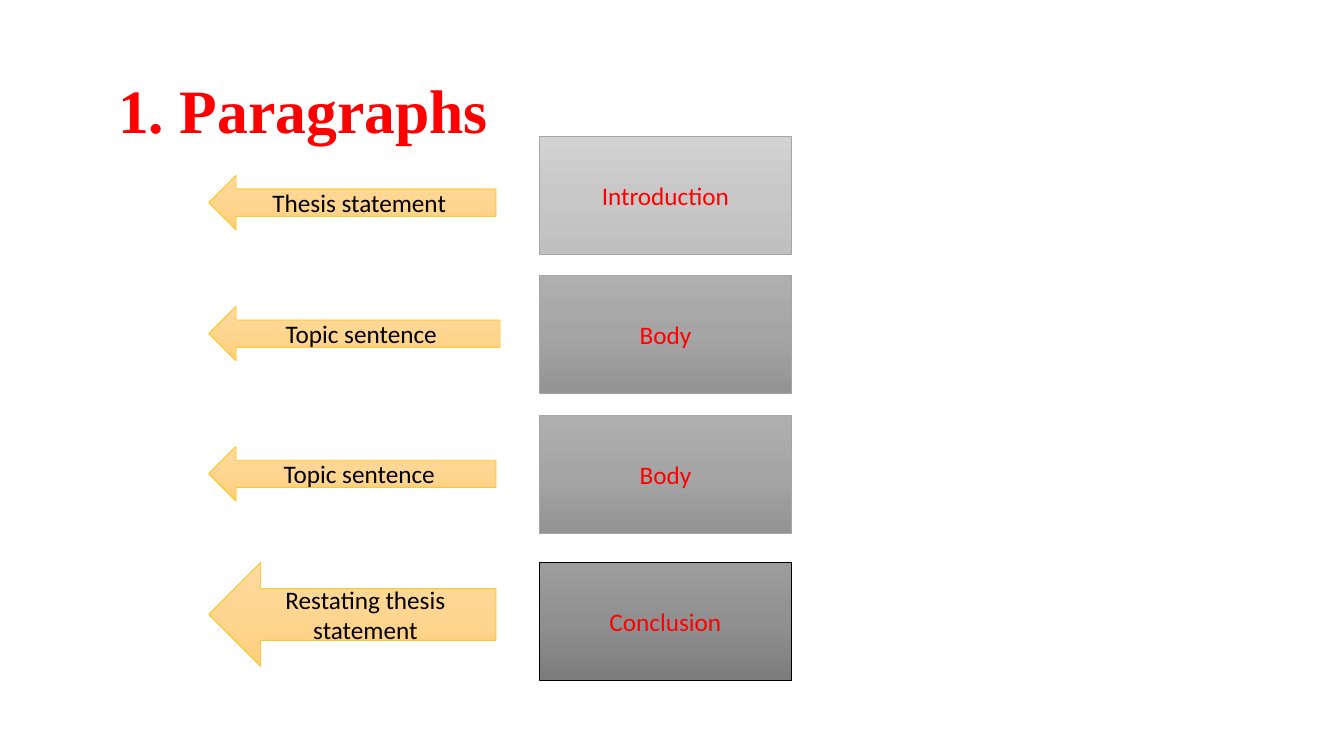
"""Build a slide that pairs essay paragraphs with their key sentences."""
from copy import deepcopy
from dataclasses import dataclass

from pptx import Presentation
from pptx.dml.color import RGBColor
from pptx.enum.shapes import MSO_SHAPE
from pptx.enum.text import MSO_ANCHOR, PP_ALIGN
from pptx.oxml.ns import qn
from pptx.util import Inches, Pt

RECT, ARROW = MSO_SHAPE.RECTANGLE, MSO_SHAPE.LEFT_ARROW
MIDDLE, CENTER = MSO_ANCHOR.MIDDLE, PP_ALIGN.CENTER


@dataclass(frozen=True)
class Paint:
    stops: tuple[str, str, str]
    line: str
    text: str


@dataclass(frozen=True)
class Theme:
    red: str = "FF0000"
    light: Paint = Paint(("D2D2D2", "C8C8C8", "C0C0C0"), "A5A5A5", "FF0000")
    mid: Paint = Paint(("AFAFAF", "A5A5A5", "939393"), "A5A5A5", "FF0000")
    dark: Paint = Paint(("9D9D9D", "909090", "7C7C7C"), "000000", "FF0000")
    gold: Paint = Paint(("FFDB9E", "FFD590", "FFD07C"), "FFC000", "000000")
    title_font: str = "Times New Roman"
    body_font: str = "Calibri"
    title_size: int = 44
    body_size: int = 18
    line_width: float = 0.5


@dataclass(frozen=True)
class Box:
    left: float
    top: float
    width: float
    height: float

    def inches(self) -> list[int]:
        return [Inches(n) for n in (self.left, self.top, self.width, self.height)]


@dataclass(frozen=True)
class Part:
    label: str
    top: float
    paint: Paint
    note: str
    note_top: float
    note_width: float = 2.85
    note_height: float = 0.54


THEME = Theme()
PARTS = (
    Part("Introduction", 1.35, THEME.light, "Thesis statement", 1.74),
    Part("Body", 2.73, THEME.mid, "Topic sentence", 3.04, note_width=2.89),
    Part("Body", 4.12, THEME.mid, "Topic sentence", 4.43),
    Part("Conclusion", 5.58, THEME.dark, "Restating thesis statement", 5.58,
         note_height=1.03),
)


def write(shape, text: str, font: str, size: int, color: str):
    frame = shape.text_frame
    frame.word_wrap = True
    frame.vertical_anchor = MIDDLE
    para = frame.paragraphs[0]
    para.text = text
    para.font.name = font
    para.font.size = Pt(size)
    para.font.color.rgb = RGBColor.from_string(color)
    return para


def shade(shape, colors: tuple[str, str, str]) -> None:
    fill = shape.fill
    fill.gradient()
    fill.gradient_angle = 270
    first = shape.element.spPr.find(".//" + qn("a:gs"))
    first.addnext(deepcopy(first))
    for i, (stop, color) in enumerate(zip(fill.gradient_stops, colors)):
        stop.position = i / 2
        stop.color.rgb = RGBColor.from_string(color)


def add_block(slide, kind: MSO_SHAPE, box: Box, text: str, paint: Paint) -> None:
    shape = slide.shapes.add_shape(kind, *box.inches())
    shape.shadow.inherit = False
    shade(shape, paint.stops)
    shape.line.color.rgb = RGBColor.from_string(paint.line)
    shape.line.width = Pt(THEME.line_width)
    para = write(shape, text, THEME.body_font, THEME.body_size, paint.text)
    para.alignment = CENTER


def add_title(slide, text: str) -> None:
    shape = slide.shapes.add_textbox(*Box(0.92, 0.4, 11.5, 1.45).inches())
    para = write(shape, text, THEME.title_font, THEME.title_size, THEME.red)
    para.font.bold = True
    para.line_spacing = 0.9


def main() -> None:
    deck = Presentation()
    deck.slide_width, deck.slide_height = Inches(13.33), Inches(7.5)
    slide = deck.slides.add_slide(deck.slide_layouts[6])
    add_title(slide, " 1. Paragraphs")
    for part in PARTS:
        add_block(slide, RECT, Box(5.35, part.top, 2.5, 1.17), part.label, part.paint)
        arrow = Box(2.07, part.note_top, part.note_width, part.note_height)
        add_block(slide, ARROW, arrow, part.note, THEME.gold)
    deck.save("out.pptx")


if __name__ == "__main__":
    main()
